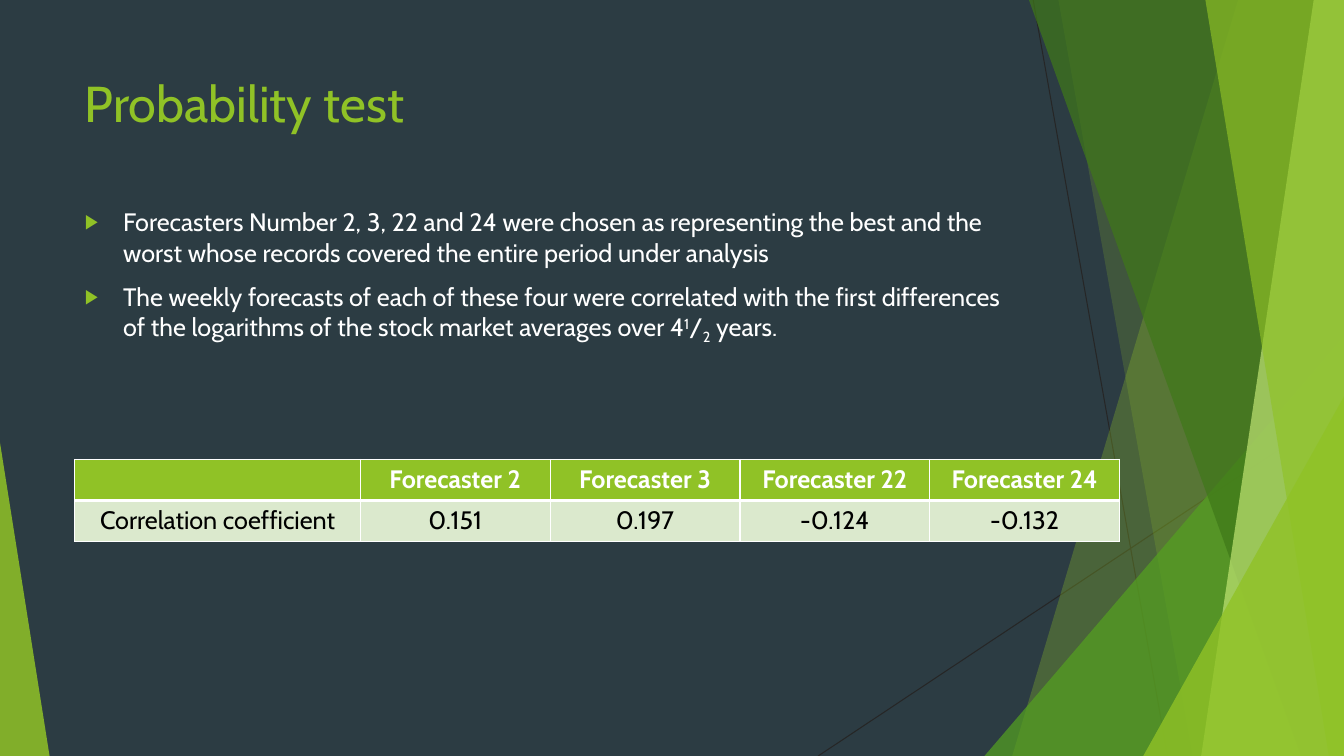
from pptx import Presentation
from pptx.dml.color import RGBColor
from pptx.enum.shapes import MSO_CONNECTOR, MSO_SHAPE
from pptx.enum.text import MSO_ANCHOR, MSO_AUTO_SIZE, PP_ALIGN
from pptx.oxml.ns import qn
from pptx.util import Inches, Pt
from lxml.etree import SubElement

COLS, ROWS = 160, 90
UNIT = Inches(7.5) / ROWS
LEFT, TEXT_WIDTH = 8.9, 112.8
GREEN, WHITE, BLACK = "90C226", "FFFFFF", "000000"
BACKGROUND, HAIRLINE, PALE_GREEN = "2C3C43", "262626", "DBE9CD"

TITLE_FONT = {"name": "Cabin", "size": Pt(36), "bold": False}
BODY_FONT = {"name": "Cabin", "size": Pt(18), "bold": False}
HEADER_FONT = {**BODY_FONT, "bold": True}
FRAME = {"word_wrap": True, "auto_size": MSO_AUTO_SIZE.NONE, "vertical_anchor": MSO_ANCHOR.TOP}

HAIRLINES = [(123, 0, 139, 90), (160, 48.4, 97.4, 90)]
UPPER_FACETS = [(147.4, 120.5, GREEN, 30), (126, 142, GREEN, 20)]
LOWER_FACETS = [
    (122.5, 154.9, "3F7819", 70),
    (156.4, 143, "C0E474", 70),
    (143.5, 158.2, GREEN, 65),
]

BULLETS = [
    [("Forecasters Number 2, 3, 22 and 24 were chosen as representing the best and the "
      "worst whose records covered the entire period under analysis", 0)],
    [("The weekly forecasts of each of these four were correlated with the first differences "
      "of the logarithms of the stock market averages over 4", 0),
     ("1", 30), ("/", 0), ("2", -25), (" years.", 0)],
]
RESULTS = [
    ["", "Forecaster 2", "Forecaster 3", "Forecaster 22", "Forecaster 24"],
    ["Correlation coefficient", "0.151", "0.197", "-0.124", "-0.132"],
]


def grid(*lengths):
    return [round(n * UNIT) for n in lengths]


def rgb(value):
    return RGBColor.from_string(value)


def apply(target, values):
    for name, value in values.items():
        setattr(target, name, value)


def paint(s, color, alpha):
    s.shadow.inherit = False
    s.line.fill.background()
    s.fill.solid()
    s.fill.fore_color.rgb = rgb(color)
    clr = s.element.spPr.find(".//" + qn("a:srgbClr"))
    SubElement(clr, qn("a:alpha"), val=str(alpha * 1000))


def add_hairline(slide, *ends):
    s = slide.shapes.add_connector(MSO_CONNECTOR.STRAIGHT, *grid(*ends))
    s.line.color.rgb = rgb(HAIRLINE)
    s.line.width = Pt(0.75)
    SubElement(s.element.spPr, qn("a:effectLst"))


def add_facet(slide, top_x, bottom_x, color, alpha):
    builder = slide.shapes.build_freeform(*grid(top_x, 0))
    corners = [(COLS, 0), (COLS, ROWS), (bottom_x, ROWS)]
    builder.add_line_segments([grid(*c) for c in corners], close=True)
    paint(builder.convert_to_shape(), color, alpha)


def add_triangle(slide, x, y, width, apex, color, alpha):
    s = slide.shapes.add_shape(MSO_SHAPE.ISOSCELES_TRIANGLE, *grid(x, y, width, ROWS - y))
    s.adjustments[0] = apex
    paint(s, color, alpha)


def add_backdrop(slide):
    slide.background.fill.solid()
    slide.background.fill.fore_color.rgb = rgb(BACKGROUND)
    for ends in HAIRLINES:
        add_hairline(slide, *ends)
    for facet in UPPER_FACETS:
        add_facet(slide, *facet)
    add_triangle(slide, 117.2, 40, 42.8, 1, "54A021", 72)
    for facet in LOWER_FACETS:
        add_facet(slide, *facet)
    add_triangle(slide, 136.1, 47.2, 23.9, 1, GREEN, 80)
    add_triangle(slide, 0, 52.7, 5.9, 0, GREEN, 85)


def add_run(p, text, font, color, baseline=0):
    r = p.add_run()
    r.text = text
    apply(r.font, font)
    r.font.color.rgb = rgb(color)
    if baseline:
        r.font._element.set("baseline", str(baseline * 1000))


def place(s, top, height):
    box = grid(LEFT, top, TEXT_WIDTH, height)
    apply(s, dict(zip(("left", "top", "width", "height"), box)))
    apply(s.text_frame, FRAME)
    return s.text_frame


def add_title(slide, text):
    p = place(slide.shapes.title, 8, 11.6).paragraphs[0]
    p.alignment = PP_ALIGN.LEFT
    add_run(p, text, TITLE_FONT, GREEN)


def set_bullet(p):
    apply(p, {"alignment": PP_ALIGN.LEFT, "space_before": Pt(10)})
    pPr = p._p.get_or_add_pPr()
    indent = Inches(0.38)
    pPr.set("marL", str(indent))
    pPr.set("indent", str(-indent))
    SubElement(SubElement(pPr, qn("a:buClr")), qn("a:srgbClr"), val=GREEN)
    SubElement(pPr, qn("a:buSzPct"), val="80000")
    SubElement(pPr, qn("a:buChar"), char="▶")


def add_bullets(slide, bullets):
    tf = place(slide.placeholders[1], 24, 50.9)
    for i, runs in enumerate(bullets):
        p = tf.add_paragraph() if i else tf.paragraphs[0]
        set_bullet(p)
        for text, baseline in runs:
            add_run(p, text, BODY_FONT, WHITE, baseline)


def set_borders(cell, widths):
    tcPr = cell._tc.get_or_add_tcPr()
    for i, (side, width) in enumerate(widths.items()):
        ln = tcPr.makeelement(qn("a:ln" + side), {"w": str(Pt(width))})
        fill = SubElement(ln, qn("a:solidFill"))
        SubElement(fill, qn("a:srgbClr"), val=WHITE)
        tcPr.insert(i, ln)


def add_results(slide, rows):
    widths = [34] + [22.6] * 4
    row_height = 4.88
    box = grid(LEFT, 54.7, sum(widths), row_height * len(rows))
    table = slide.shapes.add_table(len(rows), len(widths), *box).table
    for column, width in zip(table.columns, grid(*widths)):
        column.width = width
    looks = [
        (HEADER_FONT, WHITE, GREEN, {"L": 1, "R": 1, "T": 1, "B": 3}),
        (BODY_FONT, BLACK, PALE_GREEN, {"L": 1, "R": 1, "T": 3, "B": 1}),
    ]
    for i, (values, (font, color, fill, borders)) in enumerate(zip(rows, looks)):
        for j, value in enumerate(values):
            cell = table.cell(i, j)
            cell.fill.solid()
            cell.fill.fore_color.rgb = rgb(fill)
            set_borders(cell, borders)
            p = cell.text_frame.paragraphs[0]
            p.alignment = PP_ALIGN.CENTER
            if value:
                add_run(p, value, font, color)


def main():
    prs = Presentation()
    prs.slide_width, prs.slide_height = grid(COLS, ROWS)
    slide = prs.slides.add_slide(prs.slide_layouts[1])
    add_backdrop(slide)
    add_title(slide, "Probability test")
    add_bullets(slide, BULLETS)
    add_results(slide, RESULTS)
    prs.save("out.pptx")


if __name__ == "__main__":
    main()
